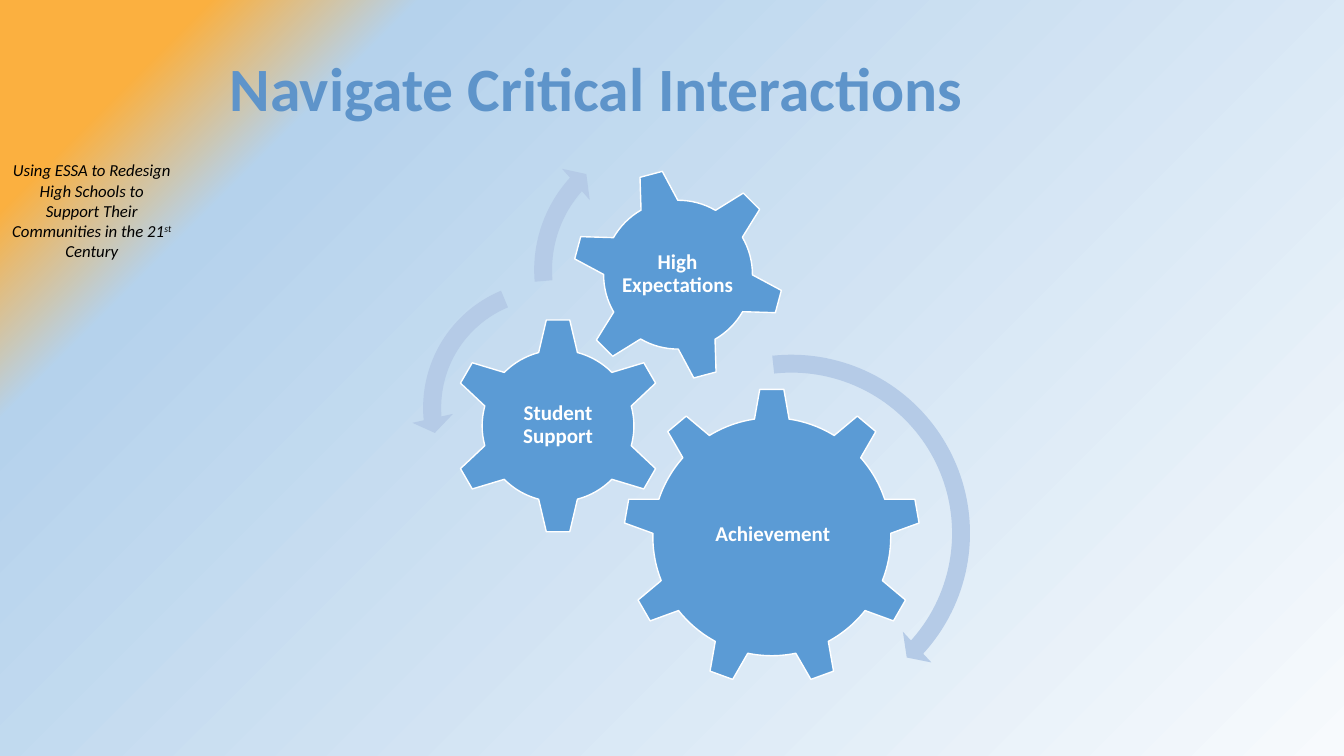
"""Build the slide on navigating critical interactions, with three meshing gears."""
import pptx
import pptx.dml.color
import pptx.enum.shapes
import pptx.enum.text
import pptx.oxml
import pptx.oxml.ns
import pptx.util

Inches = pptx.util.Inches
Pt = pptx.util.Pt
SHAPE = pptx.enum.shapes.MSO_SHAPE
ALIGN = pptx.enum.text.PP_ALIGN
ANCHOR = pptx.enum.text.MSO_ANCHOR
AUTO_SIZE = pptx.enum.text.MSO_AUTO_SIZE

COLORS = {
    "gear": "5B9BD5",
    "arrow": "B5CBE7",
    "title": "5E94CA",
    "white": "FFFFFF",
    "black": "000000",
    "pale": "F7FAFD",
    "sky": "B5D2EC",
    "orange": "FBB040",
}
FONT = "Calibri"
TITLE = "Navigate Critical Interactions"
TAGLINE = [
    ("Using ESSA to Redesign High Schools to Support Their Communities in the 21", False),
    ("st", True),
    (" Century", False),
]
BACKDROP = [(0, "pale", 100), (80, "sky", 50), (90, "orange", 55), (100, "orange", 100)]

# label, preset, left, top, size, rotation, label box
GEARS = [
    ("Achievement", SHAPE.GEAR_9, 6.18, 3.85, 2.95, 0, (6.78, 4.54, 1.77, 1.52)),
    ("Student Support", SHAPE.GEAR_6, 4.46, 3.15, 2.15, 0, (5, 3.69, 1.07, 1.06)),
    ("High Expectations", SHAPE.GEAR_6, 5.67, 1.67, 2.11, 345, (6.13, 2.13, 1.18, 1.18)),
]
# preset, left, top, size, adjustments
ARROWS = [
    (SHAPE.CIRCULAR_ARROW, 5.96, 3.4, 3.78, (0.047, 2.99, 25.31, 158.297, 0.055)),
    (SHAPE.LEFT_CIRCULAR_ARROW, 4.08, 2.67, 2.75, (0.065, 4.3, 104.891, 148.378, 0.075)),
    (SHAPE.CIRCULAR_ARROW, 5.18, 1.2, 2.96, (0.06, 3.941, 133.138, 105.082, 0.07)),
]


def rgb(name):
    return pptx.dml.color.RGBColor.from_string(COLORS[name])


def style(font, size, color, bold=False, italic=False):
    font.name, font.size, font.bold, font.italic = FONT, Pt(size), bold, italic
    font.color.rgb = rgb(color)


def paint_background(slide):
    stops = "".join(
        f'<a:gs pos="{position * 1000}"><a:srgbClr val="{COLORS[color]}">'
        f'<a:alpha val="{opacity * 1000}"/></a:srgbClr></a:gs>'
        for position, color, opacity in BACKDROP
    )
    background = pptx.oxml.parse_xml(
        f'<p:bg {pptx.oxml.ns.nsdecls("p", "a")}><p:bgPr><a:gradFill rotWithShape="1">'
        f'<a:gsLst>{stops}</a:gsLst><a:path path="circle">'
        '<a:fillToRect l="100000" t="100000"/></a:path>'
        '<a:tileRect r="-100000" b="-100000"/></a:gradFill><a:effectLst/></p:bgPr></p:bg>'
    )
    slide.element.cSld.insert(0, background)


def add_tagline(slide):
    tagline = slide.shapes.add_textbox(Inches(0.02), Inches(1.54), Inches(1.78), Inches(1.11))
    frame = tagline.text_frame
    frame.word_wrap = True
    frame.auto_size = AUTO_SIZE.SHAPE_TO_FIT_TEXT
    paragraph = frame.paragraphs[0]
    paragraph.alignment = ALIGN.CENTER
    for words, raised in TAGLINE:
        run = paragraph.add_run()
        run.text = words
        style(run.font, 12, "black", italic=True)
        if raised:
            run.font._element.set("baseline", "30000")


def add_title(slide):
    title = slide.shapes.title
    title.left, title.top = Inches(2.18), Inches(0.18)
    title.width, title.height = Inches(10.83), Inches(1.45)
    frame = title.text_frame
    frame.text = TITLE
    frame.auto_size = AUTO_SIZE.NONE
    frame.vertical_anchor = ANCHOR.MIDDLE
    paragraph = frame.paragraphs[0]
    paragraph.alignment = ALIGN.LEFT
    paragraph.line_spacing = 0.9
    style(paragraph.runs[0].font, 44, "title", bold=True)


def add_round(group, preset, left, top, size, color):
    part = group.shapes.add_shape(preset, Inches(left), Inches(top), Inches(size), Inches(size))
    part.shadow.inherit = False
    part.fill.solid()
    part.fill.fore_color.rgb = rgb(color)
    return part


def add_gear(group, label, preset, left, top, size, rotation, label_box):
    gear = add_round(group, preset, left, top, size, "gear")
    gear.rotation = rotation
    gear.line.color.rgb = rgb("white")
    gear.line.width = Pt(1)
    caption = group.shapes.add_textbox(*map(Inches, label_box))
    frame = caption.text_frame
    frame.text = label
    frame.word_wrap = True
    frame.vertical_anchor = ANCHOR.MIDDLE
    frame.margin_left = frame.margin_right = Inches(0.02)
    frame.margin_top = frame.margin_bottom = Inches(0.02)
    paragraph = frame.paragraphs[0]
    paragraph.alignment = ALIGN.CENTER
    paragraph.line_spacing = 0.9
    style(paragraph.runs[0].font, 15, "white", bold=True)


def add_arrow(group, preset, left, top, size, adjustments):
    arrow = add_round(group, preset, left, top, size, "arrow")
    arrow.line.fill.background()
    for index, value in enumerate(adjustments):
        arrow.adjustments[index] = value


def main():
    deck = pptx.Presentation()
    deck.slide_width, deck.slide_height = Inches(13.33), Inches(7.5)
    slide = deck.slides.add_slide(deck.slide_layouts[5])
    paint_background(slide)
    add_tagline(slide)
    add_title(slide)
    gearwork = slide.shapes.add_group_shape()
    for gear in GEARS:
        add_gear(gearwork, *gear)
    for arrow in ARROWS:
        add_arrow(gearwork, *arrow)
    deck.save("out.pptx")


if __name__ == "__main__":
    main()
